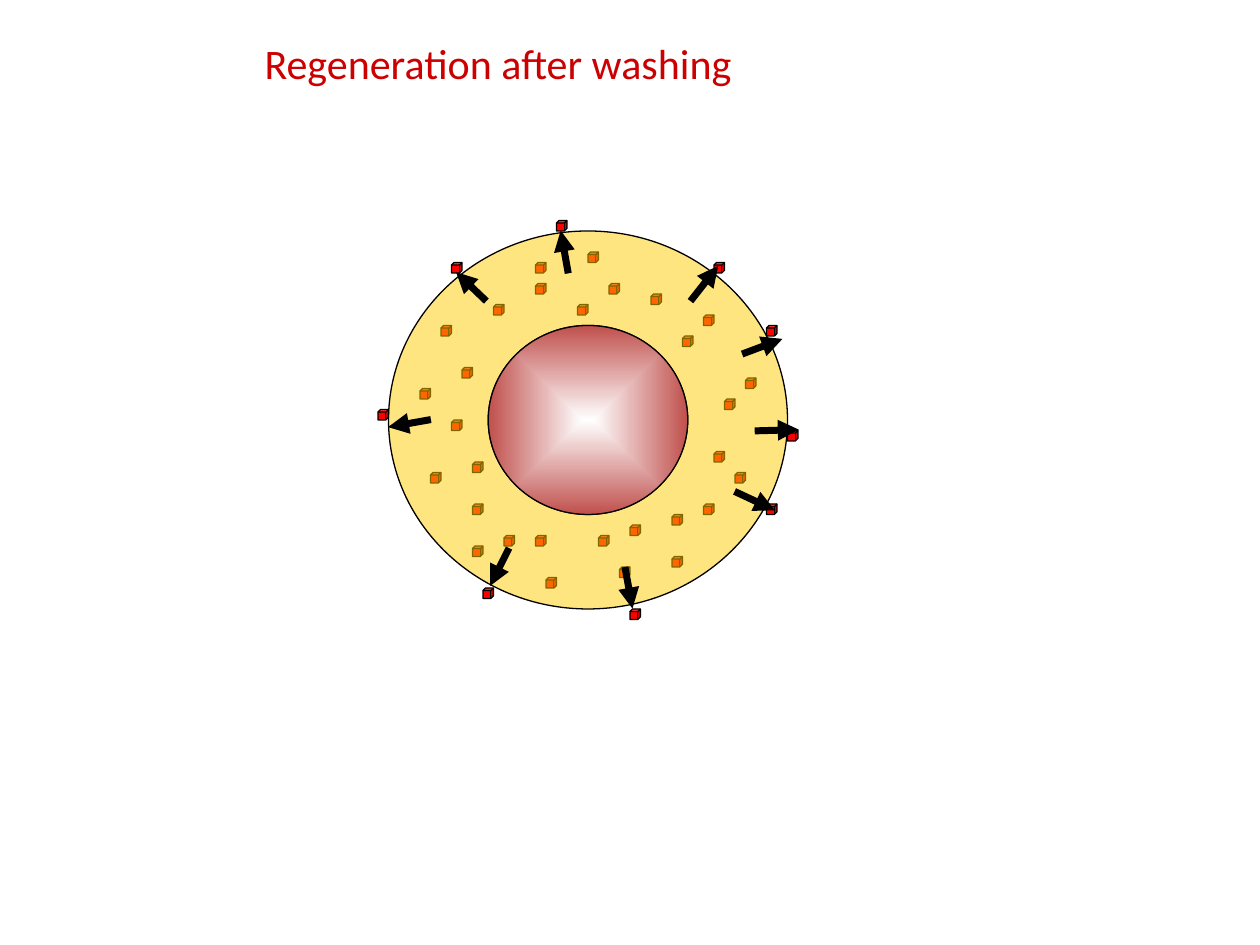
from dataclasses import dataclass

import pptx
import pptx.dml.color
import pptx.enum.shapes
import pptx.enum.text
import pptx.oxml
import pptx.oxml.ns
import pptx.util

Inches, Pt = pptx.util.Inches, pptx.util.Pt
qn = pptx.oxml.ns.qn
SHAPE = pptx.enum.shapes.MSO_SHAPE
UNIT = 1 / 12  # the drawing sits on a grid of twelfths of an inch
KAPPA = 0.55  # control length of a Bezier quarter ellipse


@dataclass
class Ellipse:
    """Centre and radii in grid units."""
    cx: float
    cy: float
    rx: float
    ry: float

    def corners(self, turn: int) -> list:
        """Left, top, right, bottom and left again; turn -1 swaps top and bottom."""
        steps = ((-1, 0), (0, -turn), (1, 0), (0, turn), (-1, 0))
        return [(grid(self.cx + i * self.rx), grid(self.cy + j * self.ry))
                for i, j in steps]


@dataclass
class Arrow:
    """Start and tip in inches."""
    x1: float
    y1: float
    x2: float
    y2: float


SHELL = Ellipse(56, 40, 19, 18)
CORE = Ellipse(56, 40, 9.5, 9)

# Left and top of each cube, in grid units
STORED = [
    (68, 43), (65, 32), (71, 36), (64, 49), (62, 28), (44, 35), (67, 30), (59, 54),
    (51, 51), (45, 48), (47, 29), (58, 27), (52, 55), (60, 50), (43, 40), (51, 27),
    (41, 45), (42, 31), (67, 48), (64, 53), (45, 52), (56, 24), (69, 38), (70, 45),
    (57, 51), (40, 37), (51, 25), (55, 29), (45, 44), (48, 51),
]
RELEASED = [(73, 48), (75, 41), (68, 25), (73, 31), (60, 58),
            (53, 21), (46, 56), (36, 39), (43, 25)]

ARROWS = [
    Arrow(4.96, 4.5, 5.02, 4.83), Arrow(5.83, 3.9, 6.15, 4.05),
    Arrow(4.04, 4.35, 3.89, 4.65), Arrow(3.42, 3.33, 3.08, 3.39),
    Arrow(3.86, 2.39, 3.62, 2.16), Arrow(4.51, 2.17, 4.45, 1.83),
    Arrow(5.48, 2.39, 5.7, 2.11), Arrow(5.89, 2.81, 6.21, 2.69),
    Arrow(5.99, 3.42, 6.34, 3.41),
]


def grid(n: float) -> int:
    return Inches(n * UNIT)


def rgb(color: str):
    return pptx.dml.color.RGBColor.from_string(color)


def make_xml(xml: str):
    tag, rest = xml.split(" ", 1)
    return pptx.oxml.parse_xml(f"{tag} {pptx.oxml.ns.nsdecls('a')} {rest}")


def outline(s, color: str = "000000", width: float = 0.75) -> None:
    s.line.color.rgb = rgb(color)
    s.line.width = Pt(width)


def fill_solid(s, color: str) -> None:
    s.fill.solid()
    s.fill.fore_color.rgb = rgb(color)


def add_cubes(shapes, cells: list) -> None:
    for col, row in cells:
        s = shapes.add_shape(SHAPE.CUBE, grid(col), grid(row), grid(1), grid(1))
        s.shadow.inherit = False
        fill_solid(s, "FF0000")
        outline(s)


def round_off(s) -> None:
    """Turn each straight segment into a quarter of an ellipse."""
    start, upright = None, True
    for step in list(s._element.iter(qn("a:moveTo"), qn("a:lnTo"))):
        pt = step.find(qn("a:pt"))
        end = int(pt.get("x")), int(pt.get("y"))
        if step.tag == qn("a:moveTo"):
            upright = True
        else:
            (px, py), (qx, qy) = start, end
            dx, dy = round(KAPPA * (qx - px)), round(KAPPA * (qy - py))
            if upright:
                controls = (px, py + dy), (qx - dx, qy)
            else:
                controls = (px + dx, py), (qx, qy - dy)
            pts = "".join(f'<a:pt x="{x}" y="{y}"/>' for x, y in (*controls, end))
            curve = make_xml(f"<a:cubicBezTo >{pts}</a:cubicBezTo>")
            step.getparent().replace(step, curve)
            upright = not upright
        start = end


def add_ring(shapes, outer: Ellipse, inner: Ellipse) -> None:
    rim, hole = outer.corners(1), inner.corners(-1)
    builder = shapes.build_freeform(*rim[0])
    builder.add_line_segments(rim[1:])
    builder.move_to(*hole[0])
    builder.add_line_segments(hole[1:])
    s = builder.convert_to_shape()
    round_off(s)
    s.shadow.inherit = False
    fill_solid(s, "FFCC00")
    color = s._element.spPr.find(f"{qn('a:solidFill')}/{qn('a:srgbClr')}")
    color.append(make_xml('<a:alpha val="50000"/>'))
    outline(s)


def add_core(shapes, e: Ellipse) -> None:
    s = shapes.add_shape(SHAPE.OVAL, grid(e.cx - e.rx), grid(e.cy - e.ry),
                         grid(2 * e.rx), grid(2 * e.ry))
    s.shadow.inherit = False
    s.fill.gradient()
    for stop, color in zip(s.fill.gradient_stops, ("FFFFFF", "C0504D")):
        stop.color.rgb = rgb(color)
    # Gradient from the centre outwards
    grad = s._element.spPr.find(qn("a:gradFill"))
    grad.replace(grad.find(qn("a:lin")), make_xml(
        '<a:path path="shape"><a:fillToRect l="50000" t="50000" '
        'r="50000" b="50000"/></a:path>'))
    outline(s)


def add_arrow(shapes, a: Arrow) -> None:
    s = shapes.add_connector(pptx.enum.shapes.MSO_CONNECTOR.STRAIGHT,
                             Inches(a.x1), Inches(a.y1), Inches(a.x2), Inches(a.y2))
    outline(s, width=4)
    spPr = s._element.spPr
    spPr.find(qn("a:ln")).append(make_xml('<a:tailEnd type="triangle"/>'))
    spPr.append(make_xml("<a:effectLst />"))


def set_title(s, text: str) -> None:
    s.left, s.top, s.width, s.height = Inches(2), Inches(0.25), Inches(5.92), Inches(0.5)
    tf = s.text_frame
    tf.text = text
    tf.word_wrap = True
    tf.auto_size = pptx.enum.text.MSO_AUTO_SIZE.SHAPE_TO_FIT_TEXT
    tf.vertical_anchor = pptx.enum.text.MSO_ANCHOR.TOP
    p = tf.paragraphs[0]
    p.alignment = pptx.enum.text.PP_ALIGN.LEFT
    r = p.runs[0]
    r.font.name, r.font.size = "Calibri", Pt(24)
    r.font.color.rgb = rgb("CC0000")


def main() -> None:
    prs = pptx.Presentation()
    prs.slide_width, prs.slide_height = Inches(10), Inches(7.5)
    slide = prs.slides.add_slide(prs.slide_layouts[5])
    shapes = slide.shapes

    set_title(shapes.title, "Regeneration after washing")

    # Particle: stored cubes under a translucent shell, around the core
    add_cubes(shapes, STORED)
    add_ring(shapes, SHELL, CORE)
    add_core(shapes, CORE)

    # Cubes moving out to the surface
    add_cubes(shapes, RELEASED)
    for arrow in ARROWS:
        add_arrow(shapes, arrow)

    prs.save("out.pptx")


if __name__ == "__main__":
    main()
